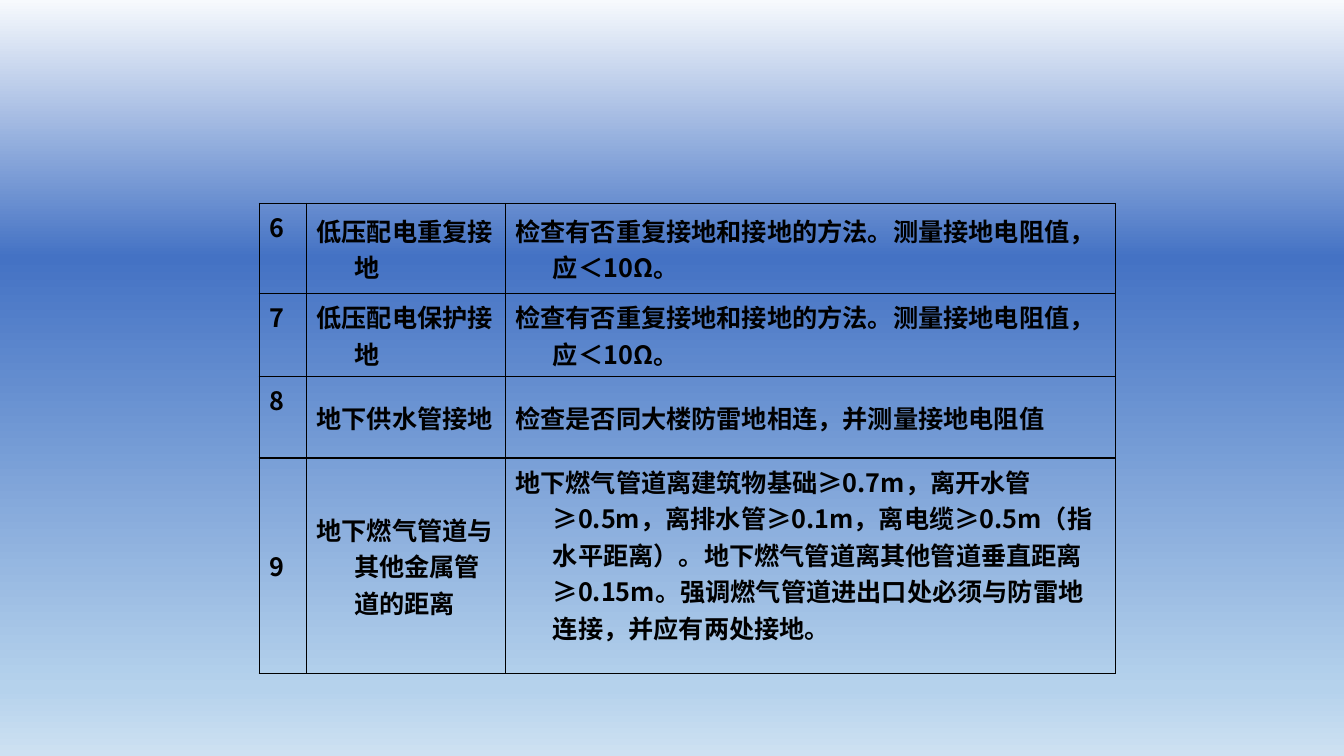
from dataclasses import dataclass

from lxml.etree import SubElement
from pptx import Presentation
from pptx.dml.color import RGBColor
from pptx.enum.text import MSO_ANCHOR
from pptx.oxml.ns import qn
from pptx.slide import Slide
from pptx.table import _Cell
from pptx.util import Cm, Pt

FONT = "Noto Sans CJK SC"
BLACK = "000000"
INDENT = Cm(0.95)
TOP, MIDDLE = MSO_ANCHOR.TOP, MSO_ANCHOR.MIDDLE
GRADIENT = [(0, "F7FAFD"), (34, "4472C4"), (91, "B5D2EC"), (100, "CEE1F2")]
COLUMN_WIDTHS = [Cm(1.19), Cm(5.01), Cm(15.39)]
GROUNDING_CHECK = "检查有否重复接地和接地的方法。测量接地电阻值，应＜10Ω。"


@dataclass
class CheckItem:
    number: str
    name: str
    method: str
    height: Cm
    number_anchor: MSO_ANCHOR = TOP
    method_anchor: MSO_ANCHOR = MIDDLE


ITEMS = [
    CheckItem("6", "低压配电重复接地", GROUNDING_CHECK, Cm(2.26)),
    CheckItem("7", "低压配电保护接地", GROUNDING_CHECK, Cm(2.06)),
    CheckItem("8", "地下供水管接地", "检查是否同大楼防雷地相连，并测量接地电阻值", Cm(2.06)),
    CheckItem(
        "9",
        "地下燃气管道与其他金属管道的距离",
        "地下燃气管道离建筑物基础≥0.7m，离开水管≥0.5m，离排水管≥0.1m，"
        "离电缆≥0.5m（指水平距离）。地下燃气管道离其他管道垂直距离≥0.15m。"
        "强调燃气管道进出口处必须与防雷地连接，并应有两处接地。",
        Cm(5.43),
        number_anchor=MIDDLE,
        method_anchor=TOP,
    ),
]


def color(value: str) -> RGBColor:
    return RGBColor.from_string(value)


def paint_background(s: Slide) -> None:
    fill = s.background.fill
    fill.gradient()
    fill.gradient_angle = 270
    stops = next(s.element.iter(qn("a:gsLst")))
    stops.clear()
    for percent, value in GRADIENT:
        stop = SubElement(stops, qn("a:gs"), pos=str(percent * 1000))
        SubElement(stop, qn("a:srgbClr"), val=str(color(value)))


def draw_borders(cell: _Cell) -> None:
    tc_pr = cell._tc.get_or_add_tcPr()
    for side in ("L", "R", "T", "B"):
        line = SubElement(tc_pr, qn(f"a:ln{side}"), w=str(Pt(1)))
        line_fill = SubElement(line, qn("a:solidFill"))
        SubElement(line_fill, qn("a:srgbClr"), val=str(color(BLACK)))


def write_cell(cell: _Cell, text: str, anchor: MSO_ANCHOR) -> None:
    draw_borders(cell)
    cell.fill.background()
    cell.vertical_anchor = anchor
    cell.text = text
    p = cell.text_frame.paragraphs[0]
    p_pr = p._p.get_or_add_pPr()
    p_pr.set("marL", str(INDENT))
    p_pr.set("indent", str(-INDENT))
    r = p.runs[0]
    r.font.size = Pt(18)
    r.font.bold = True
    r.font.color.rgb = color(BLACK)
    r.font.name = FONT
    SubElement(r._r.get_or_add_rPr(), qn("a:ea"), typeface=FONT)


def add_check_table(s: Slide, items: list[CheckItem]) -> None:
    width = sum(COLUMN_WIDTHS)
    height = sum(item.height for item in items)
    sp = s.shapes.add_table(
        len(items), len(COLUMN_WIDTHS), Cm(6.53), Cm(5.13), width, height
    )
    table = sp.table
    table.first_row = False
    table.horz_banding = False
    for column, column_width in zip(table.columns, COLUMN_WIDTHS):
        column.width = column_width
    for row, item in zip(table.rows, items):
        row.height = item.height
        number, name, method = row.cells
        write_cell(number, item.number, item.number_anchor)
        write_cell(name, item.name, MIDDLE)
        write_cell(method, item.method, item.method_anchor)


def main() -> None:
    prs = Presentation()
    prs.slide_width = Cm(33.87)
    prs.slide_height = Cm(19.05)
    s = prs.slides.add_slide(prs.slide_layouts[6])
    paint_background(s)
    add_check_table(s, ITEMS)
    prs.save("out.pptx")


if __name__ == "__main__":
    main()
